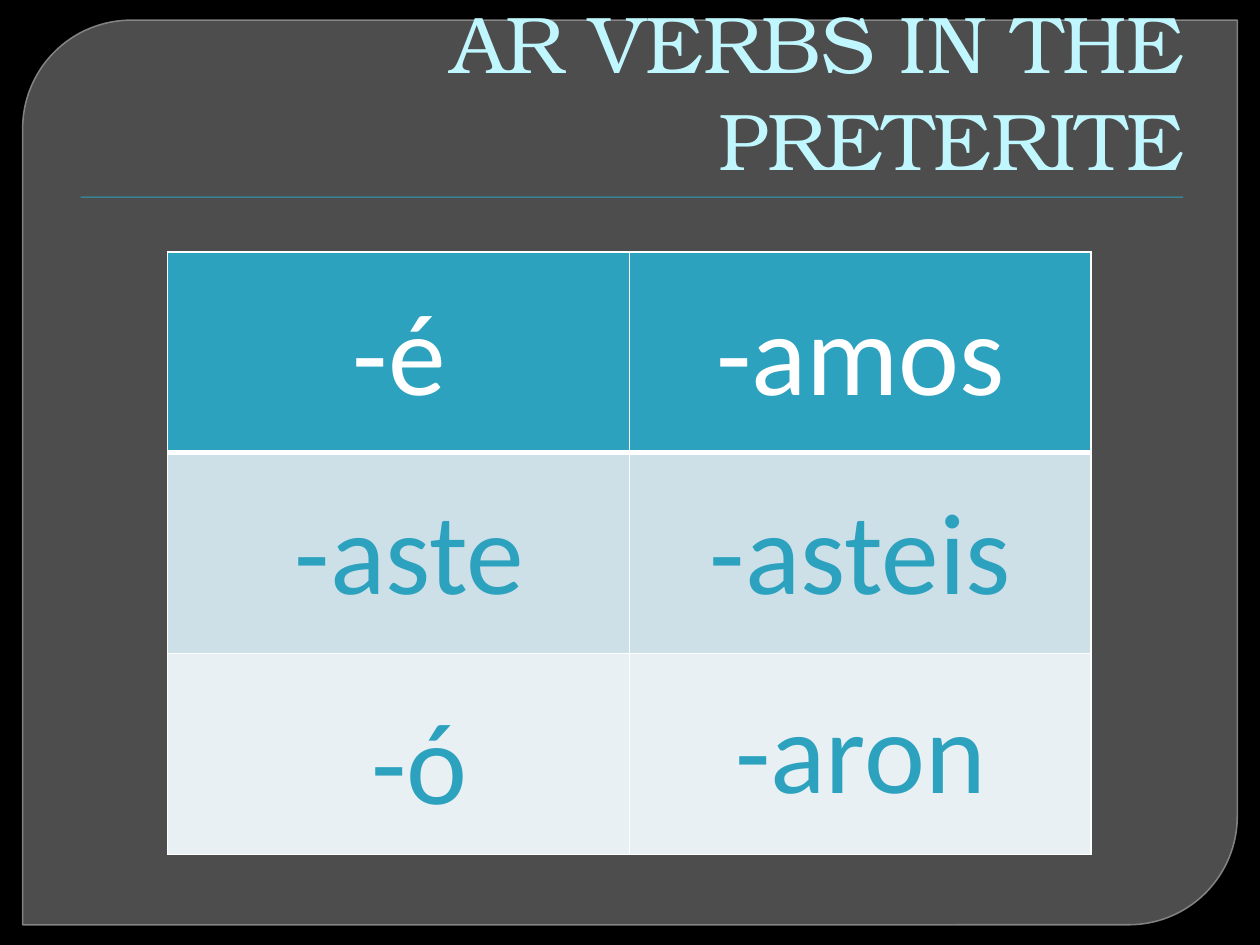
"""Build a slide showing the preterite endings of Spanish -ar verbs."""
from dataclasses import dataclass

from lxml import etree
from pptx import Presentation
from pptx.dml.color import RGBColor
from pptx.enum import shapes, text
from pptx.oxml import ns
from pptx.util import Inches, Pt

TITLE = "AR VERBS IN THE PRETERITE"
ENDINGS = [
    [("-é", 1.67, 2.17), ("-amos", 5.33, 2.17)],
    [("-aste", 1.75, 3.75), ("-asteis", 5.33, 3.75)],
    [("-ó", 1.83, 5.42), ("-aron", 5.33, 5.33)],
]


@dataclass(frozen=True)
class Theme:
    background: str = "000000"
    panel: str = "777777"
    panel_line: str = "8E8E8E"
    accent: str = "2DA2BF"
    title: str = "C0F7FF"
    white: str = "FFFFFF"
    rows: tuple = ("2DA2BF", "CDE0E8", "E8F0F4")
    title_font: str = "TeX Gyre Bonum"
    body_font: str = "Calibri"
    title_size: int = 46
    body_size: int = 66


THEME = Theme()


def paint(fill, color):
    fill.solid()
    fill.fore_color.rgb = RGBColor.from_string(color)


def set_alpha(properties, percent):
    color = properties.find(ns.qn("a:solidFill"))[0]
    etree.SubElement(color, ns.qn("a:alpha"), val=str(percent * 1000))


def add_box(slide, kind, box, color):
    shape = slide.shapes.add_shape(kind, *map(Inches, box))
    shape.shadow.inherit = False
    paint(shape.fill, color)
    shape.line.fill.background()
    return shape


def add_text(slide, words, box, font, size, color, alignment):
    shape = slide.shapes.add_textbox(*map(Inches, box))
    shape.text_frame.word_wrap = True
    paragraph = shape.text_frame.paragraphs[0]
    paragraph.alignment = alignment
    run = paragraph.add_run()
    run.text = words
    run.font.name = font
    run.font.size = Pt(size)
    run.font.color.rgb = RGBColor.from_string(color)
    return shape


def set_borders(cell, widths):
    properties = cell._tc.get_or_add_tcPr()
    for index, (side, width) in enumerate(widths.items()):
        line = etree.Element(ns.qn(f"a:ln{side}"), w=str(Pt(width)))
        fill = etree.SubElement(line, ns.qn("a:solidFill"))
        etree.SubElement(fill, ns.qn("a:srgbClr"), val=THEME.white)
        properties.insert(index, line)


def add_frame(slide):
    panel = add_box(slide, shapes.MSO_SHAPE.ROUND_2_DIAG_RECTANGLE,
                    (0.18, 0.16, 9.64, 7.18), THEME.panel)
    panel.adjustments[0] = 0.12
    panel.adjustments[1] = 0
    set_alpha(panel._element.spPr, 65)
    paint(panel.line.fill, THEME.panel_line)
    panel.line.width = Pt(0.87)
    set_alpha(panel._element.spPr.find(ns.qn("a:ln")), 88)
    add_box(slide, shapes.MSO_SHAPE.RECTANGLE, (0.64, 1.56, 8.75, 0.01), THEME.accent)


def add_title(slide):
    title = add_text(slide, TITLE, (0.5, 0.28, 9, 1.25), THEME.title_font,
                     THEME.title_size, THEME.title, text.PP_ALIGN.RIGHT)
    title.text_frame.vertical_anchor = text.MSO_ANCHOR.BOTTOM


def add_endings(slide):
    box = map(Inches, (1.33, 2, 7.33, 4.78))
    table = slide.shapes.add_table(len(ENDINGS), len(ENDINGS[0]), *box).table
    for row, endings in enumerate(ENDINGS):
        for column, (ending, left, top) in enumerate(endings):
            cell = table.cell(row, column)
            paint(cell.fill, THEME.rows[row])
            set_borders(cell, {"L": 1, "R": 1, "T": 3 if row == 1 else 1,
                               "B": 3 if row == 0 else 1})
            add_text(slide, ending, (left, top, 3, 1.21), THEME.body_font,
                     THEME.body_size, THEME.accent if row else THEME.white,
                     text.PP_ALIGN.CENTER)


def main():
    presentation = Presentation()
    presentation.slide_width = Inches(10)
    presentation.slide_height = Inches(7.5)
    slide = presentation.slides.add_slide(presentation.slide_layouts[6])
    paint(slide.background.fill, THEME.background)
    add_frame(slide)
    add_title(slide)
    add_endings(slide)
    presentation.save("out.pptx")


if __name__ == "__main__":
    main()
